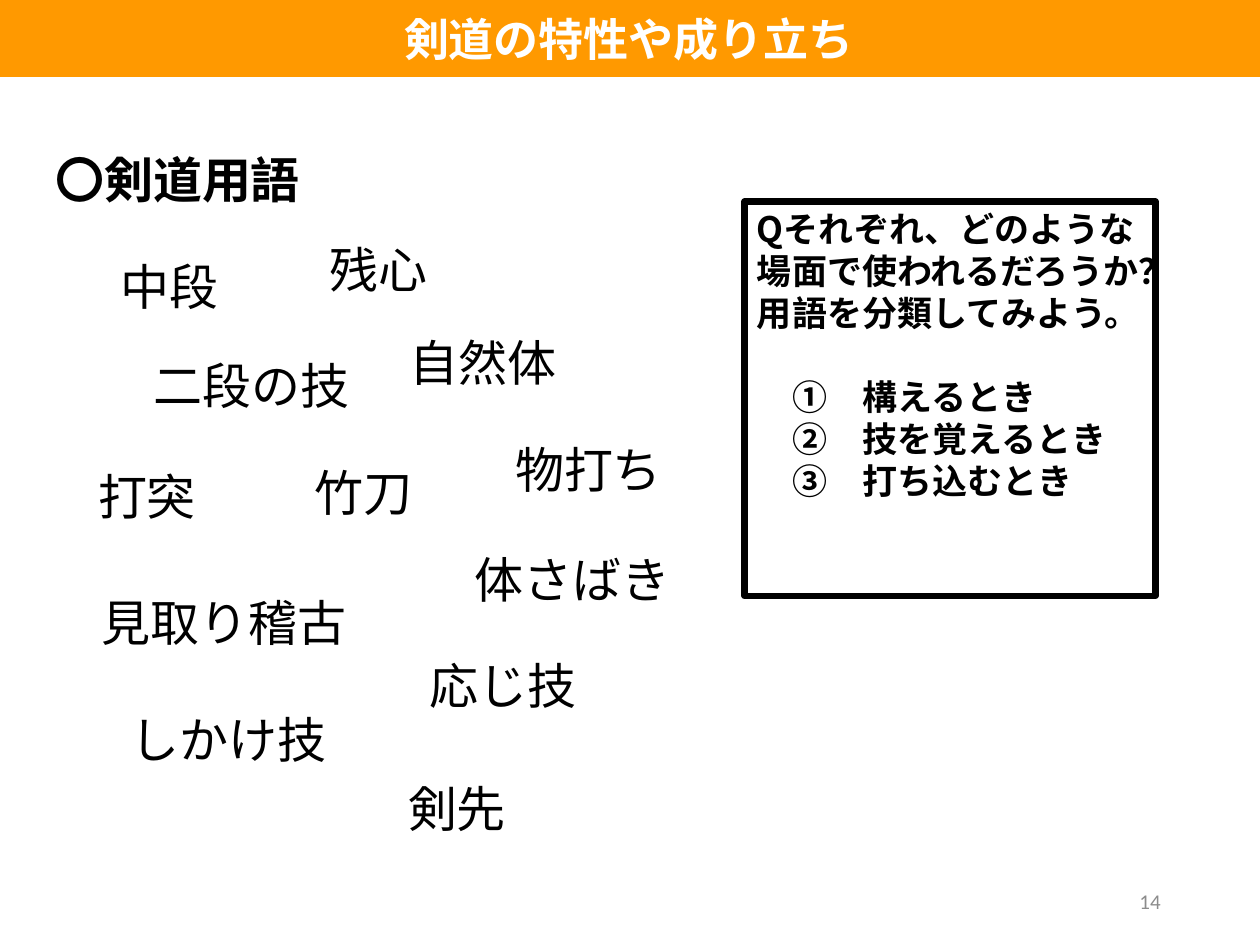
from dataclasses import dataclass

from lxml import etree
from pptx import Presentation
from pptx import util as u
from pptx.dml.color import RGBColor
from pptx.enum import shapes, text
from pptx.oxml.ns import qn


@dataclass(frozen=True)
class Theme:
    font: str = "Noto Sans CJK JP"
    number_font: str = "Calibri"
    accent: str = "FF9900"
    ink: str = "000000"
    paper: str = "FFFFFF"
    muted: str = "8C8C8C"
    title: float = 25.7
    term: float = 28
    question: float = 20
    number: float = 12


THEME = Theme()
TERM_HEIGHT = 0.57
TERMS = [
    ("中段", 0.86, 1.99, 1.3),
    ("自然体", 3.15, 2.59, 1.84),
    ("体さばき", 3.67, 4.31, 1.84),
    ("打突", 0.68, 3.65, 1.84),
    ("竹刀", 2.4, 3.62, 1.84),
    ("剣先", 3.14, 6.13, 1.11),
    ("見取り稽古", 0.71, 4.65, 2.43),
    ("しかけ技", 0.94, 5.58, 2.43),
    ("応じ技", 3.31, 5.15, 2.43),
    ("二段の技", 1.12, 2.77, 2.43),
    ("残心", 2.52, 1.85, 2.43),
    ("物打ち", 3.99, 3.44, 1.6),
]
QUESTION = "Qそれぞれ、どのような場面で使われるだろうか？用語を分類してみよう。"
CHOICES = ["①　構えるとき", "②　技を覚えるとき", "③　打ち込むとき"]


def inches(box):
    return [u.Inches(v) for v in box]


def style(p, size, color=THEME.ink, bold=False, font=THEME.font):
    for r in p.runs:
        r.font.size = u.Pt(size)
        r.font.bold = bold
        r.font.name = font
        r.font.color.rgb = RGBColor.from_string(color)
        ea = etree.SubElement(r.font._element, qn("a:ea"))
        ea.set("typeface", font)


def add_rect(s, box):
    sp = s.shapes.add_shape(shapes.MSO_SHAPE.RECTANGLE, *inches(box))
    sp.shadow.inherit = False
    return sp


def add_label(s, box, label, size, **look):
    sp = s.shapes.add_textbox(*inches(box))
    tf = sp.text_frame
    tf.word_wrap = True
    tf.text = label
    style(tf.paragraphs[0], size, **look)
    return tf


def add_title_bar(s, box, title):
    sp = add_rect(s, box)
    sp.fill.solid()
    sp.fill.fore_color.rgb = RGBColor.from_string(THEME.accent)
    sp.line.fill.background()
    tf = sp.text_frame
    tf.word_wrap = False
    tf.vertical_anchor = text.MSO_ANCHOR.MIDDLE
    tf.margin_left = tf.margin_right = u.Inches(0.07)
    tf.margin_top = tf.margin_bottom = u.Inches(0.04)
    tf.text = title
    p = tf.paragraphs[0]
    p.alignment = text.PP_ALIGN.CENTER
    style(p, THEME.title, THEME.paper, bold=True)


def add_terms(s, terms):
    for term, left, top, width in terms:
        add_label(s, (left, top, width, TERM_HEIGHT), term, THEME.term)


def add_question_box(s, box, question, choices):
    sp = add_rect(s, box)
    sp.fill.background()
    sp.line.color.rgb = RGBColor.from_string(THEME.ink)
    sp.line.width = u.Pt(3.75)
    tf = sp.text_frame
    tf.word_wrap = True
    tf.vertical_anchor = text.MSO_ANCHOR.TOP
    tf.text = "\n".join([question, *choices])
    for p in tf.paragraphs:
        p.alignment = text.PP_ALIGN.LEFT
        style(p, THEME.question, bold=True)
    for p in tf.paragraphs[1:]:
        p._p.get_or_add_pPr().set("marL", str(u.Pt(THEME.question)))
    tf.paragraphs[1].space_before = u.Pt(24)


def add_page_number(s, box, number):
    tf = add_label(s, box, number, THEME.number, color=THEME.muted, font=THEME.number_font)
    tf.vertical_anchor = text.MSO_ANCHOR.MIDDLE
    tf.paragraphs[0].alignment = text.PP_ALIGN.RIGHT


def main():
    prs = Presentation()
    prs.slide_width, prs.slide_height = u.Inches(10), u.Inches(7.5)
    s = prs.slides.add_slide(prs.slide_layouts[6])
    add_page_number(s, (7.06, 6.95, 2.25, 0.4), "14")
    add_title_bar(s, (-0.02, 0, 10.02, 0.61), "剣道の特性や成り立ち")
    add_label(s, (0.34, 1.14, 5.99, TERM_HEIGHT), "〇剣道用語", THEME.term, bold=True)
    add_terms(s, TERMS)
    add_question_box(s, (5.91, 1.6, 3.26, 3.13), QUESTION, CHOICES)
    prs.save("out.pptx")


if __name__ == "__main__":
    main()
